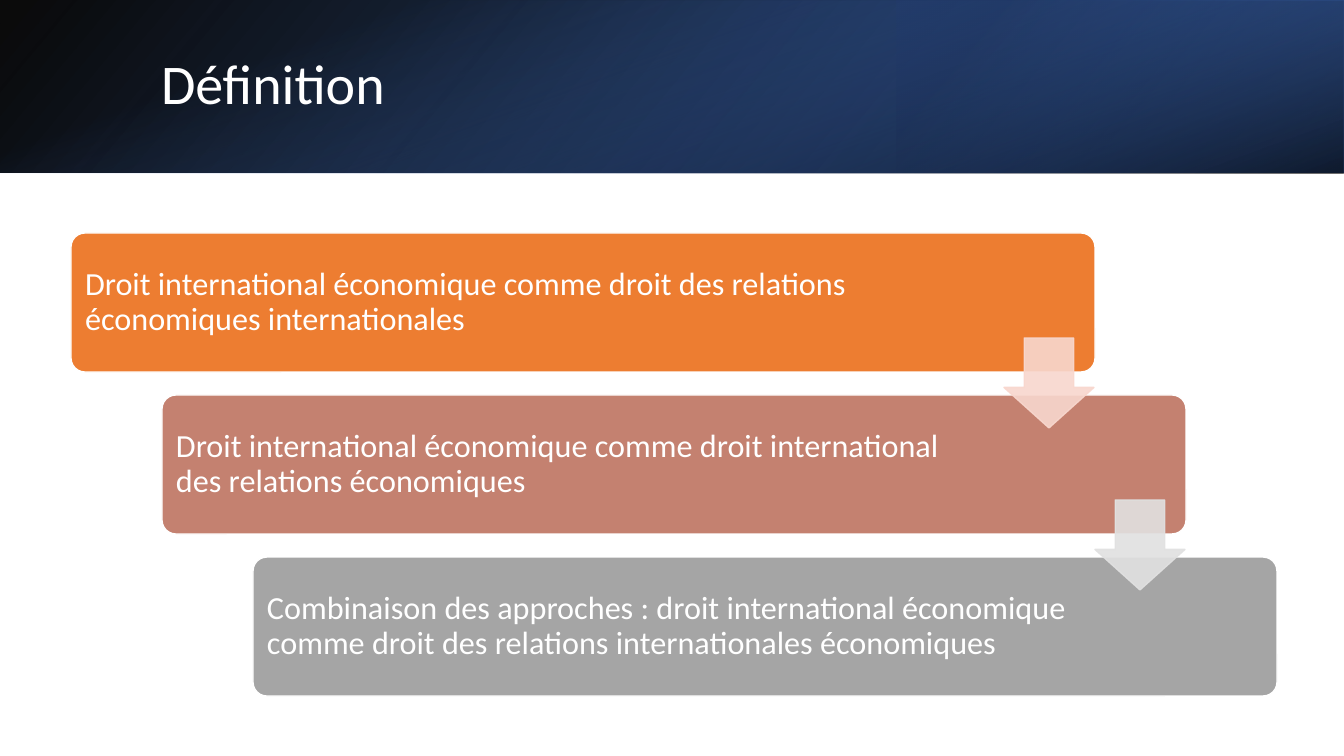
from lxml.etree import SubElement
from pptx import Presentation
from pptx.dml.color import RGBColor
from pptx.enum.shapes import MSO_SHAPE
from pptx.enum.text import MSO_ANCHOR
from pptx.oxml.ns import qn
from pptx.util import Inches, Pt

WHITE = RGBColor(0xFF, 0xFF, 0xFF)
BLACK = RGBColor(0x00, 0x00, 0x00)
NAVY = RGBColor(0x20, 0x38, 0x64)
DEEP_BLUE = RGBColor(0x2F, 0x55, 0x97)
BLUE = RGBColor(0x44, 0x72, 0xC4)
ORANGE = RGBColor(0xED, 0x7D, 0x31)
ROSE = RGBColor(0xC4, 0x81, 0x70)
GREY = RGBColor(0xA5, 0xA5, 0xA5)
PALE_ROSE = RGBColor(0xF8, 0xD7, 0xCE)
PALE_GREY = RGBColor(0xE1, 0xE1, 0xE1)

# Content
TITLE = "Définition"
STEPS = [  # text, card colour, text width
    ("Droit international économique comme droit des relations "
     "économiques internationales", ORANGE, 874),
    ("Droit international économique comme droit international "
     "des relations économiques", ROSE, 836),
    ("Combinaison des approches : droit international économique "
     "comme droit des relations internationales économiques", GREY, 836),
]
ARROW_COLOURS = [PALE_ROSE, PALE_GREY]
BANNER_LAYERS = [  # box, rotation, mirrored, angle, stops (position, colour, opacity)
    ((0, 0, 1344, 173), 0, True, 140, [(0, BLACK, 96), (100, DEEP_BLUE, 100)]),
    ((896, 0, 448, 173), 180, True, 320, [(19, NAVY, 68), (100, BLUE, 79)]),
    ((585, -585, 173, 1344), 90, False, 340, [(23, BLUE, 0), (99, BLACK, 74)]),
]

# Layout, in px
PX_PER_INCH = 100.8
TITLE_BOX = (151, 38, 1107, 97)
CARD_LEFT, CARD_TOP, CARD_W, CARD_H = 71, 233, 1024, 139
STEP_X, STEP_Y = 91, 162
TEXT_MARGIN = 4
ARROW_DX, ARROW_DY, ARROW_SIZE = 933, 105, 90

deck = Presentation()
deck.slide_width, deck.slide_height = Inches(13.333), Inches(7.5)
slide = deck.slides.add_slide(deck.slide_layouts[6])


def emu(*lengths):
    return [Inches(length / PX_PER_INCH) for length in lengths]


def add_opacity(colour_element, percent):
    SubElement(colour_element, qn("a:alpha"), val=str(percent * 1000))


def add_block(preset, box, colour, adjustments=(), opacity=100):
    block = slide.shapes.add_shape(preset, *emu(*box))
    block.shadow.inherit = False
    for index, value in enumerate(adjustments):
        block.adjustments[index] = value
    block.fill.solid()
    block.fill.fore_color.rgb = colour
    block.line.color.rgb = WHITE if opacity == 100 else colour
    block.line.width = Pt(1)
    if opacity < 100:
        for colour_element in block.element.spPr.iter(qn("a:srgbClr")):
            add_opacity(colour_element, opacity)


def add_banner_layer(box, rotation, mirrored, angle, stops):
    layer = slide.shapes.add_shape(MSO_SHAPE.RECTANGLE, *emu(*box))
    layer.shadow.inherit = False
    layer.line.fill.background()
    layer.rotation = rotation
    properties = layer.element.spPr
    if mirrored:
        properties.find(qn("a:xfrm")).set("flipH", "1")
    layer.fill.gradient()
    gradient = properties.find(qn("a:gradFill"))
    for child in list(gradient):
        gradient.remove(child)
    stop_list = SubElement(gradient, qn("a:gsLst"))
    for position, colour, opacity in stops:
        stop = SubElement(stop_list, qn("a:gs"), pos=str(position * 1000))
        add_opacity(SubElement(stop, qn("a:srgbClr"), val=str(colour)), opacity)
    SubElement(gradient, qn("a:lin"), ang=str(angle * 60000), scaled="0")


def add_text(text, box, size, inset_x=10, inset_y=10):
    frame = slide.shapes.add_textbox(*emu(*box)).text_frame
    frame.word_wrap = True
    frame.vertical_anchor = MSO_ANCHOR.MIDDLE
    frame.margin_left, frame.margin_right = emu(inset_x, inset_x)
    frame.margin_top, frame.margin_bottom = emu(inset_y, inset_y)
    paragraph = frame.paragraphs[0]
    paragraph.line_spacing = 0.9
    run = paragraph.add_run()
    run.text = text
    run.font.name = "Calibri"
    run.font.size = Pt(size)
    run.font.color.rgb = WHITE


# Banner and title
for banner_layer in BANNER_LAYERS:
    add_banner_layer(*banner_layer)
add_text(TITLE, TITLE_BOX, size=40, inset_y=5)

# Staircase of cards
corners = [(CARD_LEFT + i * STEP_X, CARD_TOP + i * STEP_Y) for i in range(len(STEPS))]
for (left, top), (wording, card_colour, text_width) in zip(corners, STEPS):
    add_block(MSO_SHAPE.ROUNDED_RECTANGLE, (left, top, CARD_W, CARD_H),
              card_colour, adjustments=[0.1])
    add_text(wording, (left + TEXT_MARGIN, top + TEXT_MARGIN, text_width,
                       CARD_H - 2 * TEXT_MARGIN), size=23)

# Arrows from each card to the next
for (left, top), arrow_colour in zip(corners, ARROW_COLOURS):
    add_block(MSO_SHAPE.DOWN_ARROW,
              (left + ARROW_DX, top + ARROW_DY, ARROW_SIZE, ARROW_SIZE),
              arrow_colour, adjustments=[0.55, 0.45], opacity=90)

deck.save("out.pptx")
